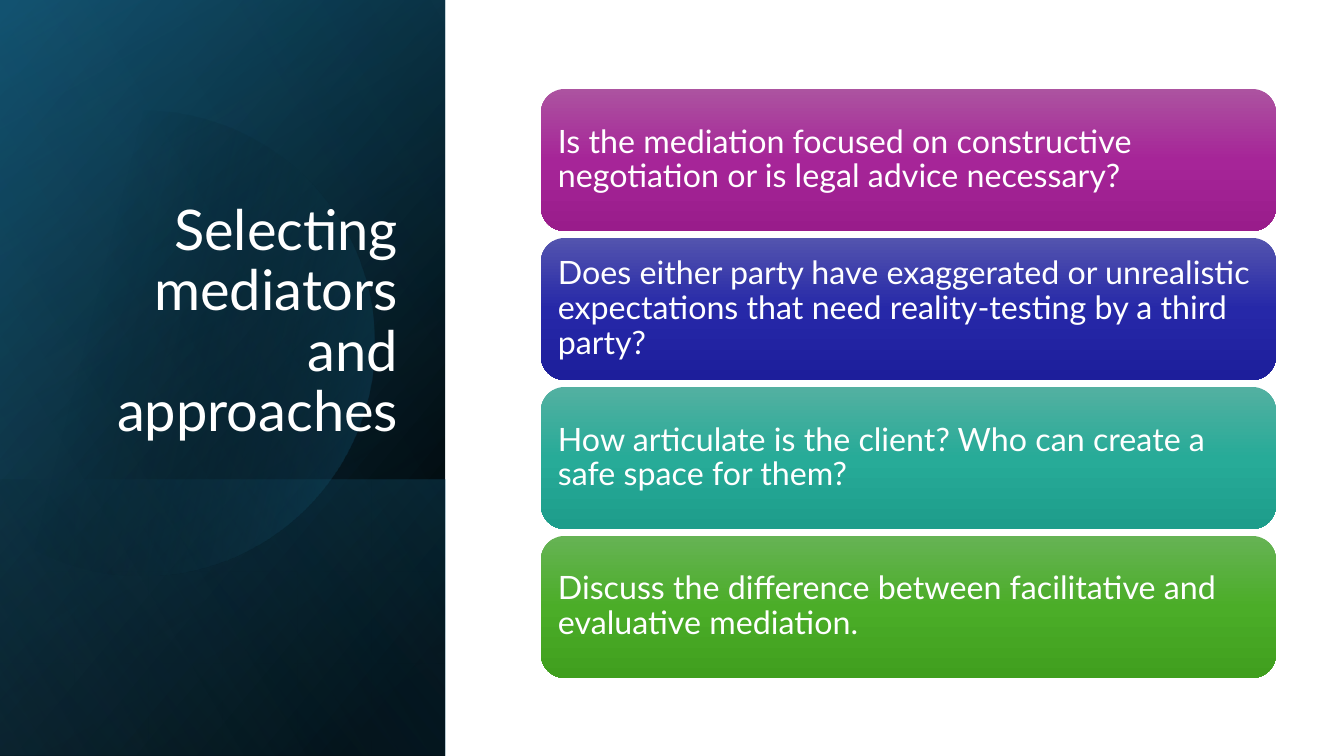
"""Builds the slide on selecting mediators and approaches."""
import math

from lxml import etree
from pptx import Presentation
from pptx import util as u
from pptx.dml.color import RGBColor
from pptx.enum import shapes, text
from pptx.oxml import ns

COLORS = {
    "white": "FFFFFF", "black": "000000", "navy": "104862",
    "blue": "156082", "sky": "46B1E1",
}
QUESTIONS = [
    ("Is the mediation focused on constructive negotiation or is legal advice necessary?",
     ["AC53A0", "A62598", "991C8B"]),
    ("Does either party have exaggerated or unrealistic expectations that need "
     "reality-testing by a third party?",
     ["5354AE", "2628A8", "1D1E9B"]),
    ("How articulate is the client? Who can create a safe space for them?",
     ["53B0A1", "27AB98", "1D9D8B"]),
    ("Discuss the difference between facilitative and evaluative mediation.",
     ["66B354", "4BAD28", "409F1E"]),
]
PANEL = (0, 0, 445, 756)
PANEL_FOOT = (0, 480, 445, 276)


class SlideBuilder:
    """Holds the style and the current slide."""

    font = "Lato"
    scale = 914400 / 100.8

    def __init__(self, prs):
        prs.slide_width, prs.slide_height = self.px(1344), self.px(756)
        self.slide = prs.slides.add_slide(prs.slide_layouts[6])

    def px(self, length):
        """Turns px into EMU."""
        return u.Emu(round(length * self.scale))

    def gradient(self, shape, stops, angle):
        """Fills a shape with (position, colour, opacity) stops, without outline."""
        grad = etree.Element(ns.qn("a:gradFill"), rotWithShape="1")
        stop_list = etree.SubElement(grad, ns.qn("a:gsLst"))
        for position, color, opacity in stops:
            stop = etree.SubElement(stop_list, ns.qn("a:gs"), pos=str(position * 1000))
            tint = etree.SubElement(stop, ns.qn("a:srgbClr"), val=color)
            if opacity < 100:
                etree.SubElement(tint, ns.qn("a:alpha"), val=str(opacity * 1000))
        etree.SubElement(grad, ns.qn("a:lin"), ang=str(angle * 60000), scaled="0")
        shape.element.spPr.insert(2, grad)
        shape.line.fill.background()
        shape.shadow.inherit = False

    def panel(self, box, stops, angle):
        """Adds a quarter-turned, mirrored rectangle that covers the box."""
        left, top, width, height = box
        shift = (width - height) / 2
        panel = self.slide.shapes.add_shape(
            shapes.MSO_SHAPE.RECTANGLE, self.px(left + shift), self.px(top - shift),
            self.px(height), self.px(width))
        panel.rotation = 90
        panel.element.spPr.xfrm.set("flipH", "1")
        self.gradient(panel, stops, angle)

    def disc(self, center_x, center_y, radius, stops, angle):
        """Adds a disc cut off at the left slide edge."""
        reach = math.acos(-center_x / radius)
        steps = 90
        turns = [reach * (2 * step / steps - 1) for step in range(steps + 1)]
        rim = [(self.px(center_x + radius * math.cos(turn)),
                self.px(center_y + radius * math.sin(turn))) for turn in turns]
        outline = self.slide.shapes.build_freeform(*rim[0])
        outline.add_line_segments(rim[1:], close=True)
        self.gradient(outline.convert_to_shape(), stops, angle)

    def paragraph(self, frame, wording, size, align, anchor):
        """Puts one paragraph into a text frame."""
        frame.word_wrap = True
        frame.vertical_anchor = anchor
        paragraph = frame.paragraphs[0]
        paragraph.alignment = align
        paragraph.line_spacing = 0.9
        run = paragraph.add_run()
        run.text = wording
        run.font.name, run.font.size = self.font, u.Pt(size)
        run.font.color.rgb = RGBColor.from_string(COLORS["white"])
        return paragraph

    def title(self, box, wording):
        """Adds the right-aligned title."""
        title = self.slide.shapes.add_textbox(*map(self.px, box))
        self.paragraph(title.text_frame, wording, 40,
                       text.PP_ALIGN.RIGHT, text.MSO_ANCHOR.BOTTOM)

    def card(self, box, wording, tones):
        """Adds a rounded question card."""
        card = self.slide.shapes.add_shape(
            shapes.MSO_SHAPE.ROUNDED_RECTANGLE, *map(self.px, box))
        self.gradient(card, [(i * 50, tone, 100) for i, tone in enumerate(tones)], 90)
        frame = card.text_frame
        frame.margin_left = frame.margin_right = self.px(10)
        frame.margin_top = frame.margin_bottom = self.px(10)
        question = self.paragraph(frame, wording, 23,
                                  text.PP_ALIGN.LEFT, text.MSO_ANCHOR.MIDDLE)
        question.space_after = u.Pt(8)


def main():
    """Builds and saves the slide."""
    prs = Presentation()
    builder = SlideBuilder(prs)
    black, blue = COLORS["black"], COLORS["blue"]
    builder.panel(PANEL, [(8, black, 100), (100, COLORS["navy"], 100)], 50)
    builder.panel(PANEL, [(0, black, 0), (99, blue, 46)], 30)
    builder.panel(PANEL_FOOT, [(2, blue, 29), (100, black, 30)], 130)
    builder.disc(142, 343, 232, [(29, black, 0), (100, blue, 43)], 14)
    builder.panel(PANEL, [(0, black, 0), (99, COLORS["sky"], 11)], 120)
    builder.title((64, 185, 344, 264), "Selecting mediators and approaches")
    for row, (question, tones) in enumerate(QUESTIONS):
        builder.card((541, 89 + row * 149, 735, 142), question, tones)
    prs.save("out.pptx")


if __name__ == "__main__":
    main()
